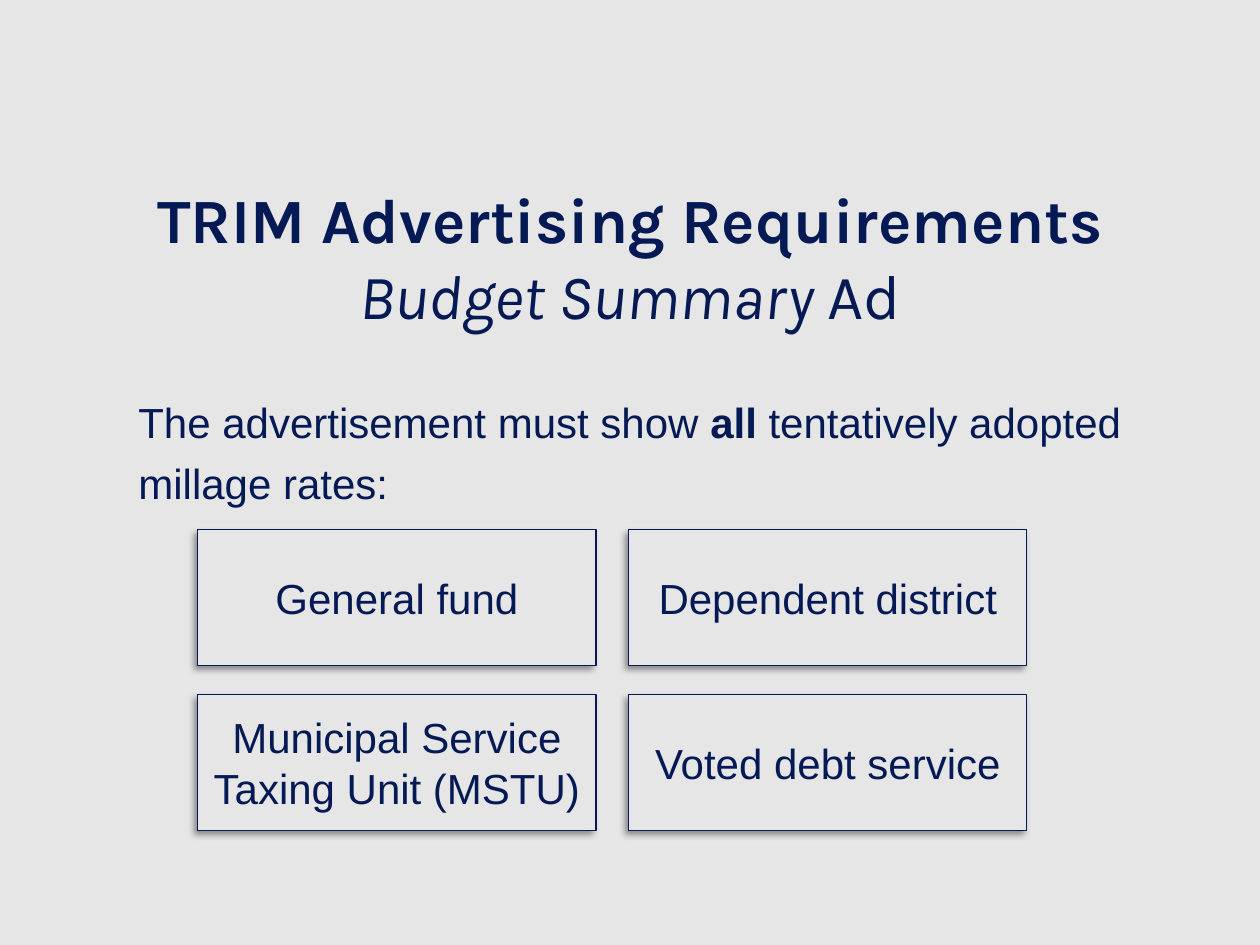
import pptx
import pptx.util
import pptx.dml.color
import pptx.enum.shapes
import pptx.enum.text
import pptx.oxml
import pptx.oxml.ns

COLORS = {"navy": "051A54", "paper": "E6E6E6", "shadow": "000000"}
W, H = 10, 7.5
FUNDS = [
    ["General fund", "Dependent district"],
    ["Municipal Service\vTaxing Unit (MSTU)", "Voted debt service"],
]


def rgb(name):
    """Return a named colour."""
    return pptx.dml.color.RGBColor.from_string(COLORS[name])


def inches(*values):
    """Convert lengths in inches."""
    return [pptx.util.Inches(v) for v in values]


def style(p, size, face, align):
    """Format a whole paragraph."""
    p.alignment = align
    p.font.size = pptx.util.Pt(size)
    p.font.name = face
    p.font.color.rgb = rgb("navy")


def add_runs(p, parts):
    """Add runs given as text, bold, italic."""
    for text, bold, italic in parts:
        r = p.add_run()
        r.text, r.font.bold, r.font.italic = text, bold, italic


def add_shadow(s):
    """Give a shape a soft shadow to the lower left."""
    s.shadow.inherit = False
    effects = s._element.spPr.find(pptx.oxml.ns.qn("a:effectLst"))
    effects.append(pptx.oxml.parse_xml(
        f'<a:outerShdw {pptx.oxml.ns.nsdecls("a")} blurRad="50800" dist="38100" '
        f'dir="8100000" algn="tr" rotWithShape="0"><a:srgbClr val="{COLORS["shadow"]}">'
        '<a:alpha val="40000"/></a:srgbClr></a:outerShdw>'))


def add_title(slide, box):
    """Place the two-line title."""
    s = slide.shapes.title
    s.left, s.top, s.width, s.height = inches(*box)
    tf = s.text_frame
    tf.vertical_anchor = pptx.enum.text.MSO_ANCHOR.MIDDLE
    p = tf.paragraphs[0]
    style(p, 36, "Karla", pptx.enum.text.PP_ALIGN.CENTER)
    add_runs(p, [("TRIM Advertising Requirements", True, False)])
    p.add_line_break()
    add_runs(p, [("Budget Summary ", False, True), ("Ad", False, False)])


def add_intro(slide, box):
    """Place the sentence above the fund boxes."""
    tf = slide.shapes.add_textbox(*inches(*box)).text_frame
    tf.word_wrap = True
    first, second = tf.paragraphs[0], tf.add_paragraph()
    add_runs(first, [("The advertisement must show ", False, False),
                     ("all", True, False),
                     (" tentatively adopted", False, False)])
    add_runs(second, [("millage rates:", False, False)])
    second.space_before = pptx.util.Pt(6)
    for p in (first, second):
        style(p, 24, "Arial", pptx.enum.text.PP_ALIGN.LEFT)


def add_fund(slide, box, text):
    """Place one outlined fund box."""
    s = slide.shapes.add_shape(pptx.enum.shapes.MSO_SHAPE.RECTANGLE, *inches(*box))
    s.fill.solid()
    s.fill.fore_color.rgb = rgb("paper")
    s.line.color.rgb = rgb("navy")
    s.line.width = pptx.util.Pt(0.75)
    add_shadow(s)
    tf = s.text_frame
    tf.word_wrap = True
    tf.vertical_anchor = pptx.enum.text.MSO_ANCHOR.MIDDLE
    p = tf.paragraphs[0]
    p.text = text
    style(p, 24, "Arial", pptx.enum.text.PP_ALIGN.CENTER)


def add_fund_grid(slide, box, gap_x, gap_y):
    """Divide the box into equal cells, one for each fund."""
    left, top, width, height = box
    rows, cols = len(FUNDS), len(FUNDS[0])
    w = (width - gap_x * (cols - 1)) / cols
    h = (height - gap_y * (rows - 1)) / rows
    for i, row in enumerate(FUNDS):
        for j, text in enumerate(row):
            add_fund(slide, (left + j * (w + gap_x), top + i * (h + gap_y), w, h), text)


def main():
    """Build and save the slide."""
    prs = pptx.Presentation()
    prs.slide_width, prs.slide_height = inches(W, H)
    slide = prs.slides.add_slide(prs.slide_layouts[5])
    slide.background.fill.solid()
    slide.background.fill.fore_color.rgb = rgb("paper")
    add_title(slide, (0.03 * W, 1.32, 0.94 * W, 1.43))
    add_intro(slide, (0.1 * W, 3.1, 0.85 * W, 1))
    add_fund_grid(slide, (1.57, 4.2, 6.58, 2.39), 0.26, 0.23)
    prs.save("out.pptx")


if __name__ == "__main__":
    main()
